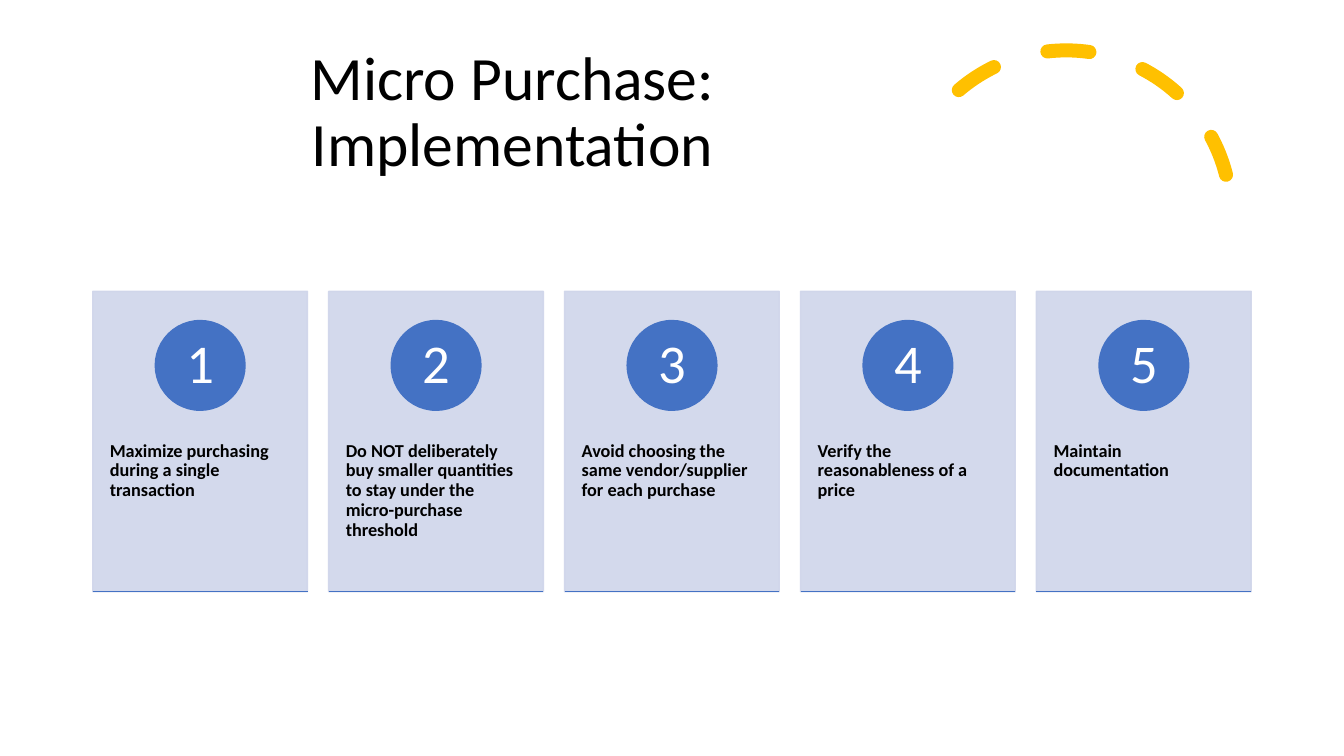
from dataclasses import dataclass

from lxml import etree
from pptx import Presentation
from pptx.dml.color import RGBColor
from pptx.enum.dml import MSO_LINE
from pptx.enum.shapes import MSO_CONNECTOR, MSO_SHAPE
from pptx.enum.text import MSO_ANCHOR, MSO_AUTO_SIZE, PP_ALIGN
from pptx.oxml.ns import qn
from pptx.util import Inches, Pt

ARC, OVAL, RECT = MSO_SHAPE.ARC, MSO_SHAPE.OVAL, MSO_SHAPE.RECTANGLE
STRAIGHT = MSO_CONNECTOR.STRAIGHT
DASH = MSO_LINE.DASH
TOP, MIDDLE = MSO_ANCHOR.TOP, MSO_ANCHOR.MIDDLE
LEFT, CENTER = PP_ALIGN.LEFT, PP_ALIGN.CENTER
NO_FIT = MSO_AUTO_SIZE.NONE


@dataclass(frozen=True)
class Theme:
    font: str = "Calibri"
    ink: str = "000000"
    white: str = "FFFFFF"
    card: str = "CFD5EA"
    blue: str = "4472C4"
    gold: str = "FFC000"
    title: int = 44
    number: int = 39
    body: int = 13


THEME = Theme()

STEPS = [
    "Maximize purchasing during a single transaction",
    "Do NOT deliberately buy smaller quantities to stay under the "
    "micro-purchase threshold",
    "Avoid choosing the same vendor/supplier for each purchase",
    "Verify the reasonableness of a price",
    "Maintain documentation",
]

CARD_X, CARD_Y, CARD_W, CARD_H = 0.92, 2.89, 2.13, 2.98
PITCH = 2.34
DISC = 0.89
DISC_Y = 3.18


def write(shape, text, size, color, bold=False, align=LEFT, anchor=TOP,
          pad=(0.1, 0.05)):
    """Set text; pad is the side and the top inset in inches."""
    frame = shape.text_frame
    frame.word_wrap = True
    frame.auto_size = NO_FIT
    frame.vertical_anchor = anchor
    frame.margin_left = frame.margin_right = Inches(pad[0])
    frame.margin_top = Inches(pad[1])
    frame.margin_bottom = Inches(0.05)
    par = frame.paragraphs[0]
    par.alignment = align
    par.line_spacing = 0.9
    run = par.add_run()
    run.text = text
    font = run.font
    font.name = THEME.font
    font.size = Pt(size)
    font.bold = bold
    font.color.rgb = RGBColor.from_string(color)


def fade(shape, percent):
    """Make the shape's solid fill and line partly opaque."""
    for color in shape.element.spPr.iter(qn("a:srgbClr")):
        alpha = etree.SubElement(color, qn("a:alpha"))
        alpha.set("val", str(percent * 1000))


def add_block(slide, kind, left, top, width, height, color):
    shape = slide.shapes.add_shape(
        kind, Inches(left), Inches(top), Inches(width), Inches(height))
    shape.shadow.inherit = False
    shape.fill.solid()
    shape.fill.fore_color.rgb = RGBColor.from_string(color)
    shape.line.color.rgb = RGBColor.from_string(color)
    shape.line.width = Pt(1)
    return shape


def add_rule(slide, left, top, width):
    rule = slide.shapes.add_connector(
        STRAIGHT, Inches(left), Inches(top), Inches(left + width), Inches(top))
    rule.line.color.rgb = RGBColor.from_string(THEME.blue)
    rule.line.width = Pt(1)
    etree.SubElement(rule.element.spPr, qn("a:effectLst"))


def add_arc(slide):
    arc = add_block(slide, ARC, 8.94, 0.5, 3.27, 3.27, THEME.gold)
    arc.fill.background()
    arc.rotation = 345.8
    arc.adjustments[0] = 146.13
    arc.adjustments[1] = 0
    arc.line.width = Pt(10)
    arc.line.dash_style = DASH
    arc.element.spPr.find(qn("a:ln")).set("cap", "rnd")


def add_title(slide, text):
    title = slide.shapes.title
    title.left, title.top = Inches(0.92), Inches(0.4)
    title.width, title.height = Inches(8.33), Inches(1.45)
    write(title, text, THEME.title, THEME.ink, align=CENTER, anchor=MIDDLE,
          pad=(0.3, 0.05))


def add_step(slide, index, text):
    left = CARD_X + index * PITCH
    card = add_block(slide, RECT, left, CARD_Y, CARD_W, CARD_H, THEME.card)
    fade(card, 90)
    write(card, text, THEME.body, THEME.ink, bold=True, pad=(0.17, 1.49))
    disc = add_block(slide, OVAL, left + (CARD_W - DISC) / 2, DISC_Y,
                     DISC, DISC, THEME.blue)
    write(disc, str(index + 1), THEME.number, THEME.white, align=CENTER,
          anchor=MIDDLE, pad=(0.07, 0.05))
    add_rule(slide, left, CARD_Y + CARD_H, CARD_W)


def main():
    deck = Presentation()
    deck.slide_width, deck.slide_height = Inches(13.33), Inches(7.5)
    slide = deck.slides.add_slide(deck.slide_layouts[5])
    add_arc(slide)
    add_title(slide, "Micro Purchase: Implementation")
    for index, text in enumerate(STEPS):
        add_step(slide, index, text)
    deck.save("out.pptx")


if __name__ == "__main__":
    main()
